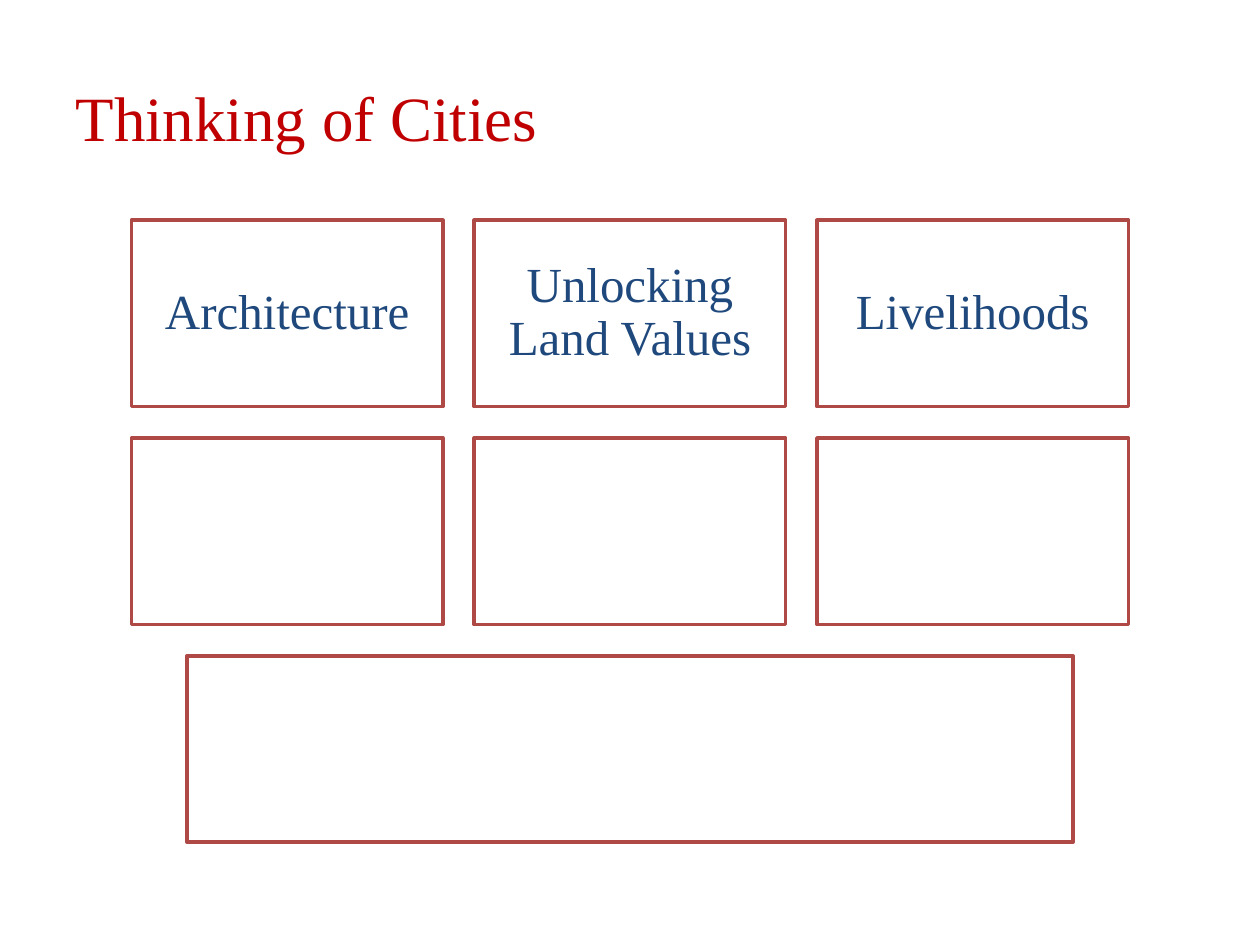
from pptx import Presentation
from pptx.dml.color import RGBColor
from pptx.enum.shapes import MSO_SHAPE
from pptx.enum.text import MSO_ANCHOR, PP_ALIGN
from pptx.util import Cm, Pt

TITLE = "Thinking of Cities"
ROWS = [
    (6.28, ["Architecture", "Unlocking Land Values", "Livelihoods"]),
    (6.28, ["", "", ""]),
    (17.86, [""]),
]
WIDE, HIGH = 25.4, 19.05
TOP, TALL, GAP = 4.44, 3.76, 0.63
FONT = "Times New Roman"
RED, BLUE, EDGE, WHITE = "C00000", "1F497D", "AE4946", "FFFFFF"


def paint(color, code):
    color.rgb = RGBColor.from_string(code)


def write(frame, text, size, code, align):
    frame.word_wrap = True
    frame.vertical_anchor = MSO_ANCHOR.MIDDLE
    para = frame.paragraphs[0]
    para.alignment = align
    run = para.add_run()
    run.text = text
    run.font.name = FONT
    run.font.size = Pt(size)
    paint(run.font.color, code)
    return para


def add_box(slide, left, top, width, text):
    box = slide.shapes.add_shape(
        MSO_SHAPE.RECTANGLE, Cm(left), Cm(top), Cm(width), Cm(TALL))
    box.shadow.inherit = False
    box.fill.solid()
    paint(box.fill.fore_color, WHITE)
    paint(box.line.color, EDGE)
    box.line.width = Pt(2)
    if text:
        frame = box.text_frame
        frame.margin_left = frame.margin_right = Cm(0.3)
        frame.margin_top = frame.margin_bottom = Cm(0.3)
        para = write(frame, text, 28, BLUE, PP_ALIGN.CENTER)
        para.line_spacing = 0.9


def main():
    deck = Presentation()
    deck.slide_width, deck.slide_height = Cm(WIDE), Cm(HIGH)
    slide = deck.slides.add_slide(deck.slide_layouts[5])
    title = slide.shapes.title
    title.left, title.top = Cm(1.27), Cm(0.76)
    title.width, title.height = Cm(22.86), Cm(3.18)
    write(title.text_frame, TITLE, 36, RED, PP_ALIGN.LEFT)

    for row, (width, texts) in enumerate(ROWS):
        span = len(texts) * (width + GAP) - GAP
        start = (WIDE - span) / 2
        top = TOP + row * (TALL + GAP)
        for col, text in enumerate(texts):
            add_box(slide, start + col * (width + GAP), top, width, text)
    deck.save("out.pptx")


if __name__ == "__main__":
    main()
